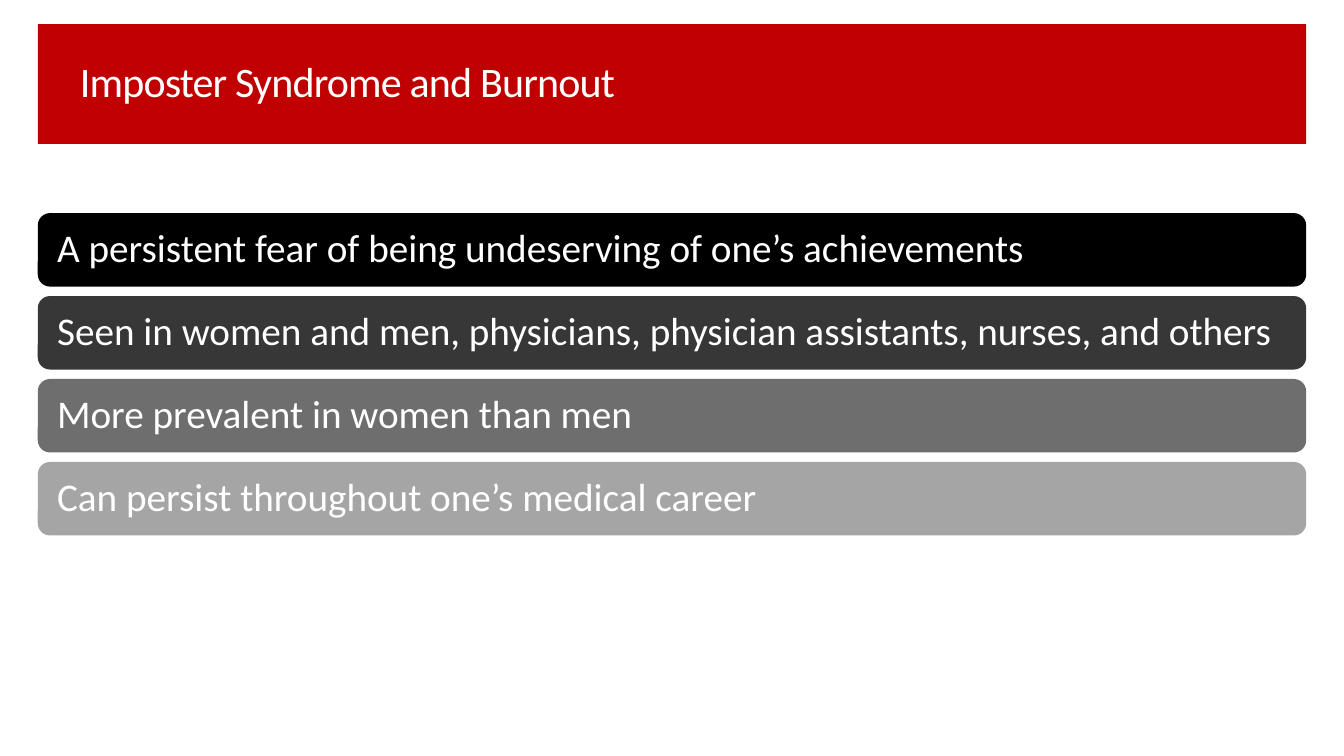
from pptx import Presentation
from pptx import util as u
from pptx.dml.color import RGBColor
from pptx.enum import shapes, text

PX = 9525
COLORS = {
    "band": "C00000",
    "text": "FFFFFF",
    "fear": "000000",
    "groups": "373737",
    "prevalence": "6E6E6E",
    "duration": "A5A5A5",
}
POINTS = [
    ("fear", "A persistent fear of being undeserving of one’s achievements"),
    ("groups", "Seen in women and men, physicians, physician assistants, nurses, and others"),
    ("prevalence", "More prevalent in women than men"),
    ("duration", "Can persist throughout one’s medical career"),
]


def write(frame, words, size, color, font="Calibri", inset=10, tracking=None):
    frame.word_wrap = True
    frame.auto_size = text.MSO_AUTO_SIZE.NONE
    frame.vertical_anchor = text.MSO_ANCHOR.MIDDLE
    frame.margin_left = frame.margin_right = inset * PX
    paragraph = frame.paragraphs[0]
    paragraph.alignment = text.PP_ALIGN.LEFT
    paragraph.line_spacing = 0.9
    run = paragraph.add_run()
    run.text = words
    run.font.name = font
    run.font.size = u.Pt(size)
    run.font.color.rgb = RGBColor.from_string(color)
    if tracking is not None:
        run._r.get_or_add_rPr().set("spc", str(tracking))


class SlideBuilder:
    def __init__(self, slide, colors):
        self.slide = slide
        self.colors = colors

    def block(self, kind, left, top, width, height, color):
        block = self.slide.shapes.add_shape(
            kind, left * PX, top * PX, width * PX, height * PX)
        block.shadow.inherit = False
        block.fill.solid()
        block.fill.fore_color.rgb = RGBColor.from_string(self.colors[color])
        block.line.fill.background()
        return block

    def band(self, left, top, width, height):
        return self.block(shapes.MSO_SHAPE.RECTANGLE, left, top, width, height, "band")

    def title(self, words, left, top, width, height):
        heading = self.slide.shapes.title
        heading.left, heading.top = left * PX, top * PX
        heading.width, heading.height = width * PX, height * PX
        write(heading.text_frame, words, 30, self.colors["text"], tracking=-60)
        self.slide.shapes._spTree.append(heading._element)

    def bar(self, words, left, top, width, height, color):
        bar = self.block(shapes.MSO_SHAPE.ROUNDED_RECTANGLE,
                         left, top, width, height, color)
        write(bar.text_frame, words, 28, self.colors["text"], inset=15)


def main():
    deck = Presentation()
    deck.slide_width, deck.slide_height = 1280 * PX, 720 * PX
    builder = SlideBuilder(deck.slides.add_slide(deck.slide_layouts[5]), COLORS)
    builder.band(36, 23, 1208, 114)
    builder.title("Imposter Syndrome and Burnout", 66, 32, 1108, 95)
    for row, (color, words) in enumerate(POINTS):
        builder.bar(words, 36, 203 + 79 * row, 1208, 70, color)
    deck.save("out.pptx")


if __name__ == "__main__":
    main()
